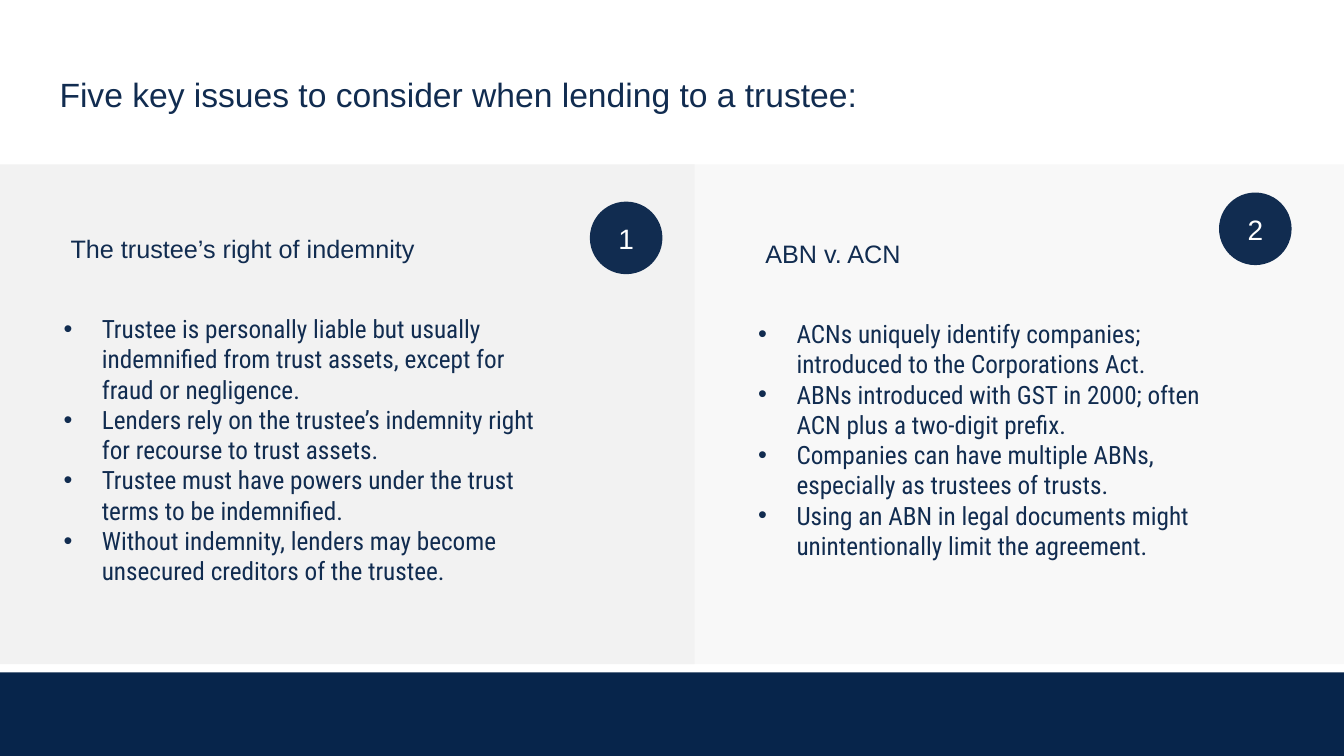
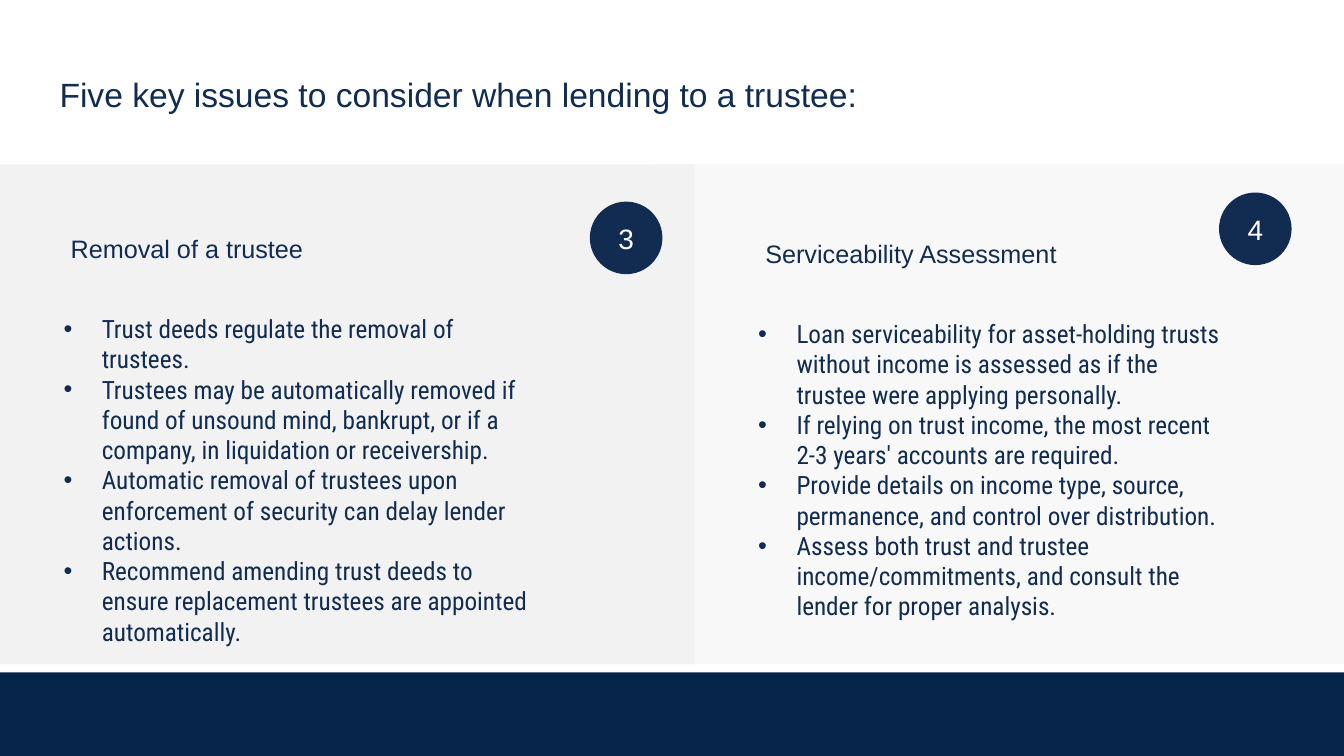
from dataclasses import dataclass

from lxml import etree
from pptx import Presentation
from pptx import util as u
from pptx.dml import color
from pptx.enum import shapes, text
from pptx.oxml import ns


@dataclass(frozen=True)
class Theme:
    ink: str = "112C50"
    band: str = "07254B"
    left_panel: str = "F2F2F2"
    right_panel: str = "EAEAEA"
    white: str = "FFFFFF"
    heading_font: str = "Arial"
    list_font: str = "Roboto Condensed"
    title_size: int = 24
    text_size: int = 18
    badge_size: int = 20


@dataclass(frozen=True)
class Grid:
    width: float = 13.33
    height: float = 7.5
    column: float = 6.89
    column_drop: float = 0.05
    text_width: float = 4.9
    panel_top: float = 1.63
    panel_height: float = 4.96
    heading_row: float = 2.24
    list_row: float = 3.06
    band_top: float = 6.67
    badge: float = 0.72


THEME = Theme()
GRID = Grid()
BADGE_SPOTS = [(5.85, 2), (12.09, 1.91)]
HEADING_INDENT = 0.3
BULLET_INDENT = 0.38
TITLE = "Five key issues to consider when lending to a trustee:"

SLIDES = [
    [
        ("The trustee’s right of indemnity", [
            "Trustee is personally liable but usually indemnified from trust assets, except for fraud or negligence.",
            "Lenders rely on the trustee’s indemnity right for recourse to trust assets.",
            "Trustee must have powers under the trust terms to be indemnified.",
            "Without indemnity, lenders may become unsecured creditors of the trustee.",
        ]),
        ("ABN v. ACN", [
            "ACNs uniquely identify companies; introduced to the Corporations Act.",
            "ABNs introduced with GST in 2000; often ACN plus a two-digit prefix.",
            "Companies can have multiple ABNs, especially as trustees of trusts.",
            "Using an ABN in legal documents might unintentionally limit the agreement.",
        ]),
    ],
    [
        ("Removal of a trustee", [
            "Trust deeds regulate the removal of trustees.",
            "Trustees may be automatically removed if found of unsound mind, bankrupt, or if a company, in liquidation or receivership.",
            "Automatic removal of trustees upon enforcement of security can delay lender actions.",
            "Recommend amending trust deeds to ensure replacement trustees are appointed automatically.",
        ]),
        ("Serviceability Assessment", [
            "Loan serviceability for asset-holding trusts without income is assessed as if the trustee were applying personally.",
            "If relying on trust income, the most recent 2-3 years' accounts are required.",
            "Provide details on income type, source, permanence, and control over distribution.",
            "Assess both trust and trustee income/commitments, and consult the lender for proper analysis.",
        ]),
    ],
]


def rgb(value):
    return color.RGBColor.from_string(value)


def add_filled(page, kind, left, top, width, height, fill):
    shape = page.shapes.add_shape(
        kind, u.Inches(left), u.Inches(top), u.Inches(width), u.Inches(height))
    shape.shadow.inherit = False
    shape.fill.solid()
    shape.fill.fore_color.rgb = rgb(fill)
    shape.line.fill.background()
    return shape


def send_to_back(shape, owner):
    owner.shapes._spTree.insert(2, shape._element)


def set_opacity(shape, percent):
    tint = shape._element.spPr.find(".//" + ns.qn("a:srgbClr"))
    etree.SubElement(tint, ns.qn("a:alpha"), val=str(percent * 1000))


def set_font(paragraph, name, size, ink):
    paragraph.font.name = name
    paragraph.font.size = u.Pt(size)
    paragraph.font.bold = False
    paragraph.font.color.rgb = rgb(ink)


def set_indent(paragraph, margin, first_line):
    properties = paragraph._p.get_or_add_pPr()
    properties.set("marL", str(u.Inches(margin)))
    properties.set("indent", str(u.Inches(first_line)))
    return properties


def add_bullet(paragraph):
    properties = set_indent(paragraph, BULLET_INDENT, -BULLET_INDENT)
    tint = etree.SubElement(properties, ns.qn("a:buClr"))
    etree.SubElement(tint, ns.qn("a:srgbClr"), val=THEME.ink)
    etree.SubElement(properties, ns.qn("a:buFont"), typeface="Arial")
    etree.SubElement(properties, ns.qn("a:buChar"), char="•")


def place_text(box, left, top, width, height, lines):
    box.left, box.top = u.Inches(left), u.Inches(top)
    box.width, box.height = u.Inches(width), u.Inches(height)
    frame = box.text_frame
    frame.text = "\n".join(lines)
    frame.word_wrap = True
    frame.auto_size = text.MSO_AUTO_SIZE.NONE
    frame.vertical_anchor = text.MSO_ANCHOR.TOP
    for paragraph in frame.paragraphs:
        paragraph.alignment = text.PP_ALIGN.LEFT
        paragraph.space_before = u.Pt(0)
    return frame.paragraphs


def fill_heading(box, left, top, width, height, words, size):
    paragraph = place_text(box, left, top, width, height, [words])[0]
    set_indent(paragraph, HEADING_INDENT, 0)
    paragraph.line_spacing = 1.07
    set_font(paragraph, THEME.heading_font, size, THEME.ink)


def fill_list(box, left, top, lines):
    for paragraph in place_text(box, left, top, GRID.text_width, 3.13, lines):
        add_bullet(paragraph)
        set_font(paragraph, THEME.list_font, THEME.text_size, THEME.ink)


def add_badge(page, left, top, number):
    badge = add_filled(page, shapes.MSO_SHAPE.OVAL, left, top, GRID.badge, GRID.badge, THEME.ink)
    badge.text_frame.text = str(number)
    badge.text_frame.vertical_anchor = text.MSO_ANCHOR.MIDDLE
    paragraph = badge.text_frame.paragraphs[0]
    paragraph.alignment = text.PP_ALIGN.CENTER
    set_font(paragraph, THEME.heading_font, THEME.badge_size, THEME.white)


def add_panels(page):
    for left, fill in [(0, THEME.left_panel), (GRID.width - GRID.column, THEME.right_panel)]:
        panel = add_filled(page, shapes.MSO_SHAPE.RECTANGLE, left, GRID.panel_top,
                           GRID.column, GRID.panel_height, fill)
        if left:
            set_opacity(panel, 33)
        send_to_back(panel, page)


def add_issue(page, side, number, heading, points):
    left, drop = side * GRID.column, side * GRID.column_drop
    heading_box, list_box = (page.placeholders[2 * side + index] for index in (1, 2))
    fill_heading(heading_box, left + 0.3, GRID.heading_row + drop, GRID.text_width, 0.43,
                 heading, THEME.text_size)
    fill_list(list_box, left + 0.53, GRID.list_row + drop, points)
    add_badge(page, *BADGE_SPOTS[side], number)


def add_issue_page(deck, layout, first_number, issues):
    page = deck.slides.add_slide(layout)
    fill_heading(page.shapes.title, 0.19, 0.66, 11.38, 0.53, TITLE, THEME.title_size)
    add_panels(page)
    for side, (heading, points) in enumerate(issues):
        add_issue(page, side, first_number + side, heading, points)
    return page


def add_layout_band(page, layout):
    band = add_filled(page, shapes.MSO_SHAPE.RECTANGLE, 0, GRID.band_top,
                      GRID.width, GRID.height - GRID.band_top, THEME.band)
    send_to_back(band, layout)


def main():
    deck = Presentation()
    deck.slide_width, deck.slide_height = u.Inches(GRID.width), u.Inches(GRID.height)
    layout = deck.slide_layouts.get_by_name("Comparison")
    pages = [add_issue_page(deck, layout, 2 * index + 1, issues)
             for index, issues in enumerate(SLIDES)]
    add_layout_band(pages[0], layout)
    deck.save("out.pptx")


if __name__ == "__main__":
    main()
